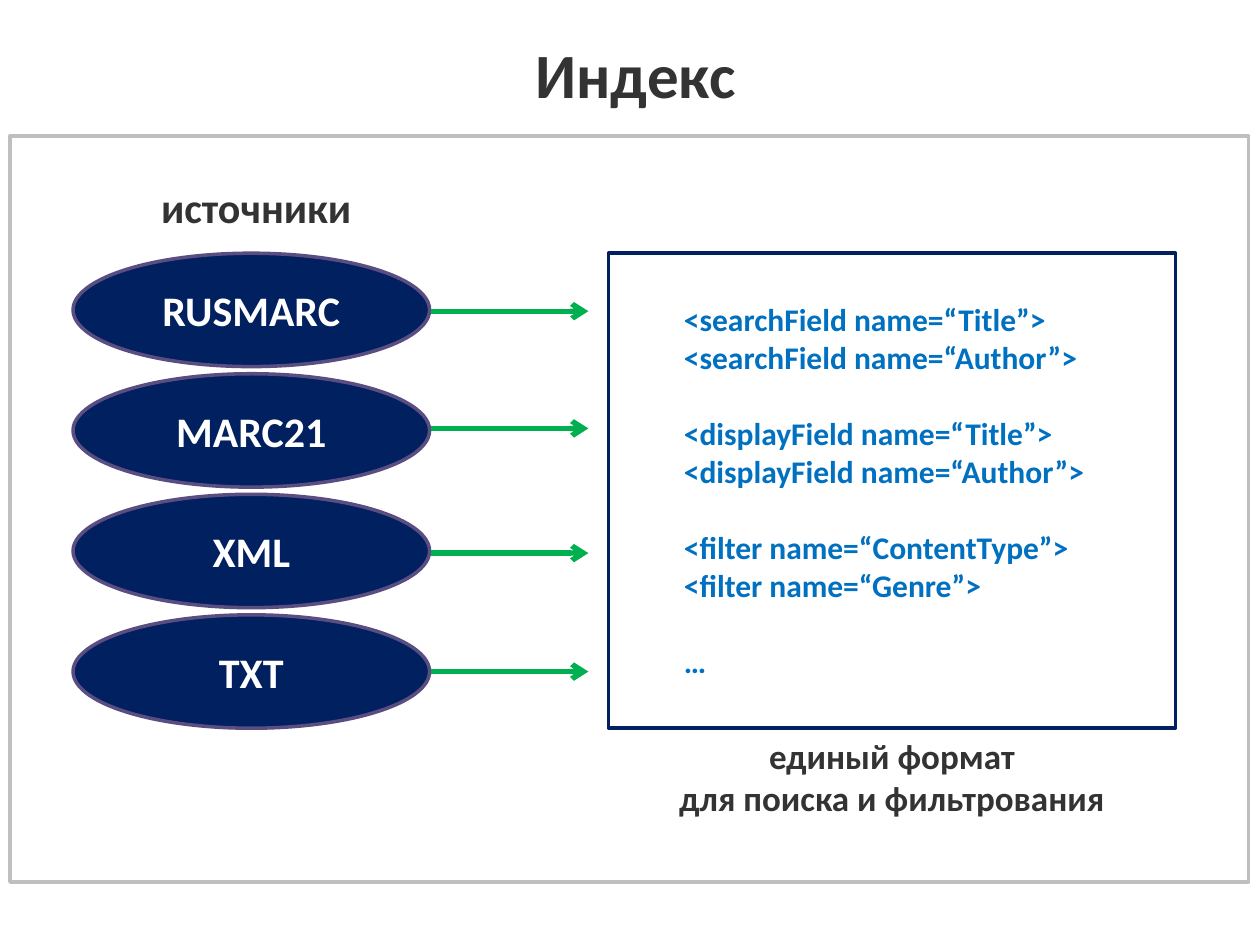
"""Build the slide that shows how source formats feed one index format."""
from lxml import etree
from pptx import Presentation
from pptx.dml.color import RGBColor
from pptx.enum.shapes import MSO_CONNECTOR, MSO_SHAPE
from pptx.enum.text import MSO_ANCHOR, PP_ALIGN
from pptx.oxml.ns import qn
from pptx.util import Inches, Pt

RECT, OVAL = MSO_SHAPE.RECTANGLE, MSO_SHAPE.OVAL
STRAIGHT = MSO_CONNECTOR.STRAIGHT
LEFT, CENTER = PP_ALIGN.LEFT, PP_ALIGN.CENTER
TOP, MIDDLE = MSO_ANCHOR.TOP, MSO_ANCHOR.MIDDLE
COLORS = {
    "white": "FFFFFF", "frame": "BFBFBF", "text": "333333", "navy": "002060",
    "outline": "5A4D81", "arrow": "00B050", "code": "0070C0",
}


def add_shape(kind, x, y, w, h, fill, line):
    sp = slide.shapes.add_shape(kind, Inches(x), Inches(y), Inches(w), Inches(h))
    sp.shadow.inherit = False
    if fill:
        sp.fill.solid()
        sp.fill.fore_color.rgb = RGBColor.from_string(COLORS[fill])
    else:
        sp.fill.background()
    sp.line.color.rgb = RGBColor.from_string(COLORS[line])
    sp.line.width = Pt(2)
    return sp


def set_text(sp, lines, size, color, align=CENTER, anchor=TOP, wrap=True):
    tf = sp.text_frame
    tf.text = "\n".join(lines)
    tf.word_wrap = wrap
    tf.vertical_anchor = anchor
    for p in tf.paragraphs:
        p.alignment = align
        for r in p.runs:
            r.font.name = "Calibri"
            r.font.size = Pt(size)
            r.font.bold = True
            r.font.color.rgb = RGBColor.from_string(COLORS[color])


prs = Presentation()
prs.slide_width, prs.slide_height = Inches(10), Inches(7.5)
slide = prs.slides.add_slide(prs.slide_layouts[6])

add_shape(RECT, 0.08, 1.08, 9.83, 5.92, "white", "frame")
title = slide.shapes.add_textbox(Inches(0.13), Inches(0.17), Inches(9.83), Inches(0.83))
set_text(title, ["Индекс"], 36, "text", anchor=MIDDLE)

sources = [("RUSMARC", 2.47), ("MARC21", 3.4), ("XML", 4.39), ("TXT", 5.33)]
step = (4.88 - 2.01) / (len(sources) - 1)
for i, (name, arrow_y) in enumerate(sources):
    sp = add_shape(OVAL, 0.58, 2.01 + i * step, 2.83, 0.9, "navy", "outline")
    set_text(sp, [name], 24, "white", anchor=MIDDLE)
    arrow = slide.shapes.add_connector(
        STRAIGHT, Inches(3.42), Inches(arrow_y), Inches(4.67), Inches(arrow_y))
    arrow.line.color.rgb = RGBColor.from_string(COLORS["arrow"])
    arrow.line.width = Pt(3)
    etree.SubElement(arrow.line._get_or_add_ln(), qn("a:tailEnd"), type="arrow")
    etree.SubElement(arrow._element.spPr, qn("a:effectLst"))

heading = slide.shapes.add_textbox(Inches(1.18), Inches(1.39), Inches(1.73), Inches(0.5))
set_text(heading, ["источники"], 24, "text", align=LEFT, wrap=False)

add_shape(RECT, 4.83, 2.01, 4.5, 3.77, None, "navy")
caption = slide.shapes.add_textbox(Inches(4.83), Inches(5.78), Inches(4.5), Inches(0.77))
set_text(caption, ["единый формат", "для поиска и фильтрования"], 20, "text")

groups = [
    ["<searchField name=“Title”>", "<searchField name=“Author”>"],
    ["<displayField name=“Title”>", "<displayField name=“Author”>"],
    ["<filter name=“ContentType”>", "<filter name=“Genre”>"],
    ["…"],
]
fields = slide.shapes.add_textbox(Inches(5.33), Inches(2.33), Inches(3.5), Inches(3.13))
set_text(fields, [line for group in groups for line in group], 18, "code", align=LEFT)
for p in fields.text_frame.paragraphs[2::2]:
    p.space_before = Pt(22)

prs.save("out.pptx")
